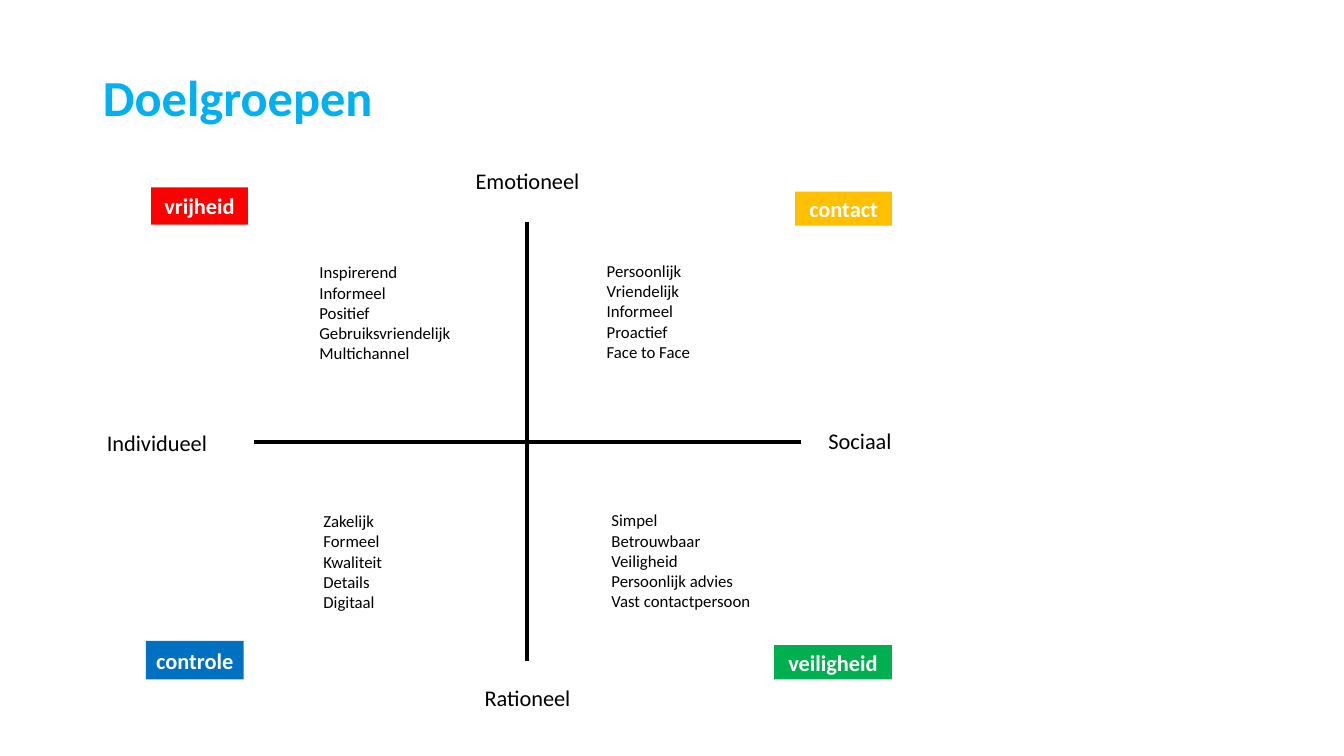
from lxml import etree
from pptx import Presentation
from pptx import util as u
from pptx.dml.color import RGBColor
from pptx.enum import shapes, text
from pptx.oxml.ns import qn

COLORS = {"title": "00B0F0", "ink": "000000", "white": "FFFFFF", "vrijheid": "FF0000",
          "contact": "FFC000", "controle": "0070C0", "veiligheid": "00B050"}
LABEL = {"size": u.Pt(16), "bold": False}
LIST = {"size": u.Pt(12), "bold": False}
TAG = {"size": u.Pt(16), "bold": True}
TITLE = {"size": u.Pt(36), "bold": True}


def rgb(name):
    return RGBColor.from_string(COLORS[name])


def write(tf, lines, fmt, color, align):
    for i, line in enumerate(lines):
        p = tf.paragraphs[0] if i == 0 else tf.add_paragraph()
        p.alignment = align
        r = p.add_run()
        r.text = line
        r.font.name = "Calibri"
        r.font.color.rgb = rgb(color)
        for key, value in fmt.items():
            setattr(r.font, key, value)


prs = Presentation()
prs.slide_width, prs.slide_height = u.Cm(33.87), u.Cm(19.05)
s = prs.slides.add_slide(prs.slide_layouts[5])

axes = s.shapes.add_group_shape()
for ends in [(6.4, 11.13, 20.19, 11.13), (13.28, 16.66, 13.28, 5.59)]:
    axis = axes.shapes.add_connector(shapes.MSO_CONNECTOR.STRAIGHT, *map(u.Cm, ends))
    axis.line.color.rgb = rgb("ink")
    axis.line.width = u.Pt(3)
    etree.SubElement(axis._element.spPr, qn("a:effectLst"))

center, left = text.PP_ALIGN.CENTER, text.PP_ALIGN.LEFT
texts = [
    (1.35, 10.69, 5.21, 0.94, LABEL, center, ["Individueel"]),
    (20.19, 10.64, 2.97, 0.94, LABEL, center, ["Sociaal"]),
    (10.82, 4.09, 4.95, 0.94, LABEL, center, ["Emotioneel"]),
    (10.82, 17.12, 4.95, 0.94, LABEL, center, ["Rationeel"]),
    (7.8, 6.48, 7.75, 2.82, LIST, left,
     ["Inspirerend", "Informeel", "Positief", "Gebruiksvriendelijk", "Multichannel"]),
    (15.04, 6.45, 7.75, 2.82, LIST, left,
     ["Persoonlijk", "Vriendelijk", "Informeel", "Proactief", "Face to Face"]),
    (7.9, 12.75, 7.75, 2.82, LIST, left,
     ["Zakelijk", "Formeel", "Kwaliteit", "Details", "Digitaal"]),
    (15.16, 12.73, 7.75, 2.82, LIST, left,
     ["Simpel", "Betrouwbaar", "Veiligheid", "Persoonlijk advies", "Vast contactpersoon"]),
]
for x, y, w, h, fmt, align, lines in texts:
    tf = s.shapes.add_textbox(u.Cm(x), u.Cm(y), u.Cm(w), u.Cm(h)).text_frame
    tf.word_wrap = True
    tf.auto_size = text.MSO_AUTO_SIZE.SHAPE_TO_FIT_TEXT
    write(tf, lines, fmt, "ink", align)

title = s.shapes.title
title.left, title.top, title.width, title.height = map(u.Cm, (2.34, 1.02, 29.21, 3.68))
tf = title.text_frame
for key, value in {"auto_size": text.MSO_AUTO_SIZE.NONE, "margin_bottom": u.Cm(0.8),
                   "vertical_anchor": text.MSO_ANCHOR.MIDDLE}.items():
    setattr(tf, key, value)
write(tf, ["Doelgroepen"], TITLE, "title", left)
tf.paragraphs[0].line_spacing = 0.9

tags = {"veiligheid": (19.51, 16.26, 2.97, 0.86), "contact": (20.04, 4.83, 2.44, 0.86),
        "vrijheid": (3.81, 4.72, 2.44, 0.94), "controle": (3.68, 16.15, 2.46, 0.97)}
for name, box in tags.items():
    sp = s.shapes.add_shape(shapes.MSO_SHAPE.RECTANGLE, *map(u.Cm, box))
    sp.shadow.inherit = False
    sp.fill.solid()
    sp.fill.fore_color.rgb = rgb(name)
    sp.line.fill.background()
    sp.text_frame.word_wrap = False
    sp.text_frame.vertical_anchor = text.MSO_ANCHOR.MIDDLE
    write(sp.text_frame, [name], TAG, "white", center)

prs.save("out.pptx")
